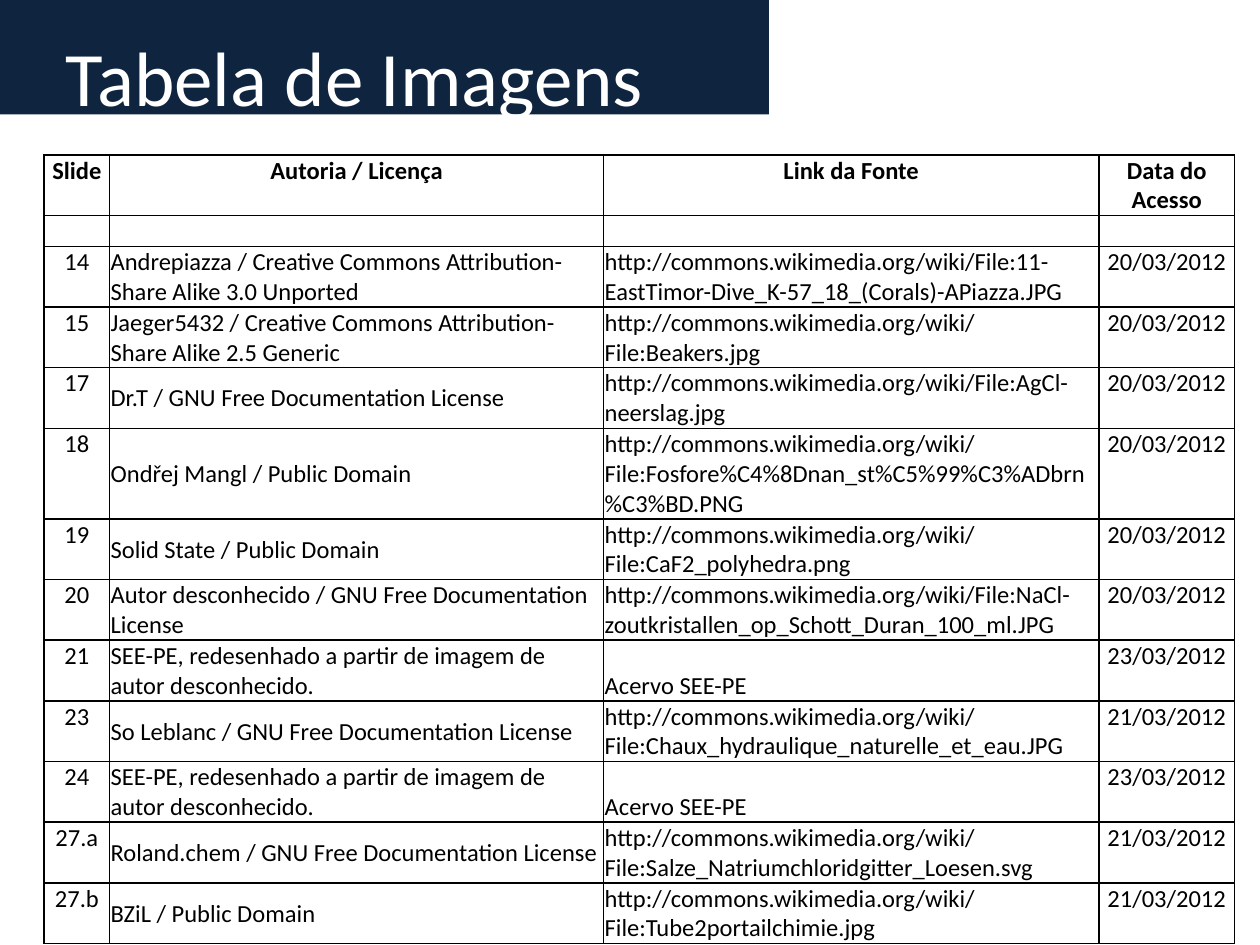
from typing import NamedTuple

from lxml import etree
from pptx import Presentation
from pptx.dml.color import RGBColor
from pptx.enum import shapes, text
from pptx.oxml.ns import qn
from pptx.util import Cm, Pt

NAVY = RGBColor(0x0F, 0x24, 0x3E)
WHITE = RGBColor(0xFF, 0xFF, 0xFF)
BLACK = RGBColor(0x00, 0x00, 0x00)
FONT = "Calibri"
CELL_SIZE = Pt(14)
LINE_HEIGHT = 0.6
WIKI = "http://commons.wikimedia.org/wiki/File:"


class Credit(NamedTuple):
    slide: str
    author: str
    link: str
    date: str
    lines: int = 2


class Column(NamedTuple):
    heading: str
    width: float
    align: text.PP_ALIGN
    anchor: text.MSO_ANCHOR


COLUMNS = [
    Column("Slide", 1.32, text.PP_ALIGN.CENTER, text.MSO_ANCHOR.TOP),
    Column("Autoria / Licença", 9.96, text.PP_ALIGN.LEFT, text.MSO_ANCHOR.MIDDLE),
    Column("Link da Fonte", 9.98, text.PP_ALIGN.LEFT, text.MSO_ANCHOR.BOTTOM),
    Column("Data do Acesso", 2.74, text.PP_ALIGN.CENTER, text.MSO_ANCHOR.TOP),
]
REDRAWN = "SEE-PE, redesenhado a partir de imagem de autor desconhecido."
ARCHIVE = "Acervo SEE-PE"
CREDITS = [
    Credit("14", "Andrepiazza / Creative Commons Attribution-Share Alike 3.0 Unported",
           WIKI + "11-EastTimor-Dive_K-57_18_(Corals)-APiazza.JPG", "20/03/2012"),
    Credit("15", "Jaeger5432 / Creative Commons Attribution- Share Alike 2.5 Generic",
           WIKI + "Beakers.jpg", "20/03/2012"),
    Credit("17", "Dr.T / GNU Free Documentation License",
           WIKI + "AgCl-neerslag.jpg", "20/03/2012"),
    Credit("18", "Ondřej Mangl / Public Domain",
           WIKI + "Fosfore%C4%8Dnan_st%C5%99%C3%ADbrn%C3%BD.PNG", "20/03/2012", 3),
    Credit("19", "Solid State / Public Domain",
           WIKI + "CaF2_polyhedra.png", "20/03/2012"),
    Credit("20", "Autor desconhecido / GNU Free Documentation License",
           WIKI + "NaCl-zoutkristallen_op_Schott_Duran_100_ml.JPG", "20/03/2012"),
    Credit("21", REDRAWN, ARCHIVE, "23/03/2012"),
    Credit("23", "So Leblanc / GNU Free Documentation License",
           WIKI + "Chaux_hydraulique_naturelle_et_eau.JPG", "21/03/2012"),
    Credit("24", REDRAWN, ARCHIVE, "23/03/2012"),
    Credit("27.a", "Roland.chem / GNU Free Documentation License",
           WIKI + "Salze_Natriumchloridgitter_Loesen.svg", "21/03/2012"),
    Credit("27.b", "BZiL / Public Domain",
           WIKI + "Tube2portailchimie.jpg", "21/03/2012"),
]


def add_borders(cell) -> None:
    properties = cell._tc.get_or_add_tcPr()
    for side in ("lnL", "lnR", "lnT", "lnB"):
        line = etree.SubElement(properties, qn(f"a:{side}"), w=str(Pt(1)))
        fill = etree.SubElement(line, qn("a:solidFill"))
        etree.SubElement(fill, qn("a:srgbClr"), val=str(BLACK))


def fill_cell(cell, words: str, align, anchor, bold: bool = False) -> None:
    add_borders(cell)
    cell.fill.background()
    cell.margin_left = cell.margin_right = cell.margin_top = Cm(0.02)
    cell.margin_bottom = 0
    cell.vertical_anchor = anchor
    paragraph = cell.text_frame.paragraphs[0]
    paragraph.text = words
    paragraph.alignment = align
    for run in paragraph.runs:
        run.font.name, run.font.size, run.font.bold = FONT, CELL_SIZE, bold
        run.font.color.rgb = BLACK
    if not words:  # keeps an empty row one line high
        etree.SubElement(paragraph._p, qn("a:endParaRPr"),
                         sz=str(int(CELL_SIZE.pt * 100)))


def add_title(slide) -> None:
    band = slide.shapes.add_shape(shapes.MSO_SHAPE.RECTANGLE, 0, 0, Cm(15.5), Cm(2.31))
    band.shadow.inherit = False
    band.fill.solid()
    band.fill.fore_color.rgb = NAVY
    band.line.fill.background()

    title = slide.shapes.title
    band._element.addnext(title._element)  # title in front of the band
    title.left, title.top, title.width, title.height = Cm(1.07), Cm(0.36), Cm(15.21), Cm(1.55)
    frame = title.text_frame
    frame.text = "Tabela de Imagens"
    frame.word_wrap = True
    frame.auto_size = text.MSO_AUTO_SIZE.NONE
    frame.vertical_anchor = text.MSO_ANCHOR.TOP
    frame.margin_top = Cm(0.23)
    frame.paragraphs[0].alignment = text.PP_ALIGN.LEFT
    font = frame.paragraphs[0].runs[0].font
    font.name, font.size = FONT, Pt(44)
    font.color.rgb = WHITE


def add_credits(slide) -> None:
    line_counts = [2, 1] + [credit.lines for credit in CREDITS]
    table = slide.shapes.add_table(
        len(line_counts), len(COLUMNS), Cm(0.89), Cm(3.12),
        Cm(sum(column.width for column in COLUMNS)),
        Cm(sum(line_counts) * LINE_HEIGHT)).table
    table.first_row = table.horz_banding = False
    for row, lines in zip(table.rows, line_counts):
        row.height = Cm(lines * LINE_HEIGHT)

    for index, column in enumerate(COLUMNS):
        table.columns[index].width = Cm(column.width)
        # Heading, then an empty row, then the credits
        fill_cell(table.cell(0, index), column.heading,
                  text.PP_ALIGN.CENTER, text.MSO_ANCHOR.TOP, bold=True)
        fill_cell(table.cell(1, index), "", column.align, column.anchor)
        for row, credit in enumerate(CREDITS, start=2):
            fill_cell(table.cell(row, index), credit[index], column.align, column.anchor)


def main() -> None:
    presentation = Presentation()
    presentation.slide_width, presentation.slide_height = Cm(25.4), Cm(19.05)
    slide = presentation.slides.add_slide(presentation.slide_layouts[5])
    add_credits(slide)
    add_title(slide)
    presentation.save("out.pptx")


if __name__ == "__main__":
    main()
